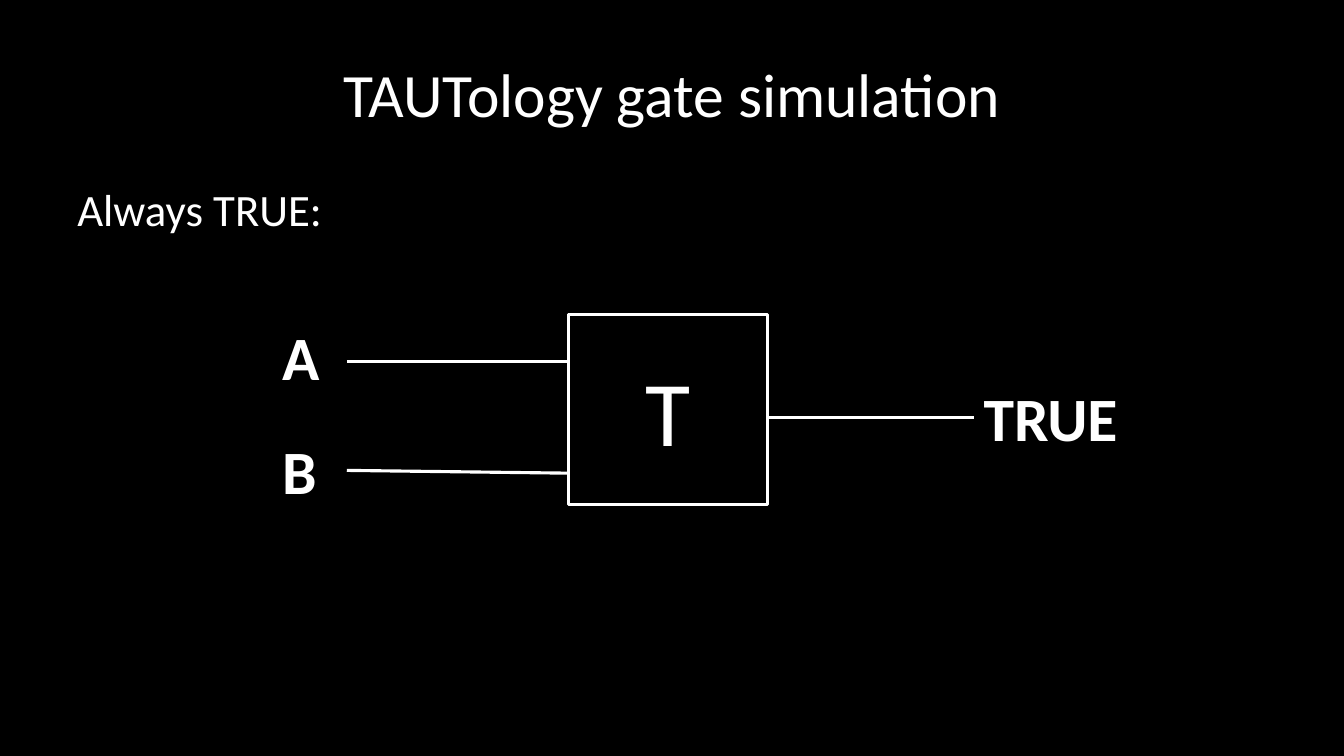
"""Build the TAUTology gate simulation slide."""
from pptx import Presentation
from pptx.dml.color import RGBColor
from pptx.enum.shapes import MSO_CONNECTOR, MSO_SHAPE
from pptx.enum.text import MSO_ANCHOR, MSO_AUTO_SIZE, PP_ALIGN
from pptx.oxml.ns import qn
from pptx.util import Pt
from lxml.etree import SubElement

COLORS = {"background": "000000", "foreground": "FFFFFF"}
FONT = "Calibri"
GATE_LEFT, GATE_TOP, GATE_WIDTH, GATE_HEIGHT = 406, 224.6, 142, 136
GATE_RIGHT = GATE_LEFT + GATE_WIDTH
INPUT_LEFT, OUTPUT_RIGHT = 247.7, 695.5


def color(name):
    return RGBColor.from_string(COLORS[name])


def set_text(sp, text, size, align=PP_ALIGN.LEFT, anchor=MSO_ANCHOR.TOP, bold=False):
    tf = sp.text_frame
    tf.text = text
    tf.vertical_anchor = anchor
    p = tf.paragraphs[0]
    p.alignment = align
    font = p.runs[0].font
    font.name, font.size, font.bold = FONT, Pt(size), bold
    font.color.rgb = color("foreground")
    return tf


def place(sp, left, top, width, height):
    sp.left, sp.top, sp.width, sp.height = map(Pt, (left, top, width, height))


def fill_title(s, text):
    sp = s.shapes.title
    place(sp, 48, 21.6, 864, 90)
    set_text(sp, text, 44, PP_ALIGN.CENTER, MSO_ANCHOR.MIDDLE)


def fill_body(s, text):
    sp = s.placeholders[1]
    place(sp, 48, 126, 864, 356.4)
    tf = set_text(sp, text, 32)
    tf.auto_size = MSO_AUTO_SIZE.NONE
    pPr = tf.paragraphs[0]._p.get_or_add_pPr()
    pPr.set("marL", "0")
    pPr.set("indent", "0")
    SubElement(pPr, qn("a:buNone"))


def add_gate(s, text):
    box = map(Pt, (GATE_LEFT, GATE_TOP, GATE_WIDTH, GATE_HEIGHT))
    sp = s.shapes.add_shape(MSO_SHAPE.RECTANGLE, *box)
    sp.shadow.inherit = False
    sp.fill.background()
    sp.line.color.rgb = color("foreground")
    sp.line.width = Pt(2)
    set_text(sp, text, 66, PP_ALIGN.CENTER, MSO_ANCHOR.MIDDLE)


def add_wire(s, x1, y1, x2, y2):
    wire = s.shapes.add_connector(MSO_CONNECTOR.STRAIGHT, *map(Pt, (x1, y1, x2, y2)))
    wire.line.color.rgb = color("foreground")
    wire.line.width = Pt(2.25)
    SubElement(wire._element.spPr, qn("a:effectLst"))


def add_label(s, text, left, top, width):
    sp = s.shapes.add_textbox(*map(Pt, (left, top, width, 60.5)))
    tf = set_text(sp, text, 44, bold=True)
    tf.word_wrap = False
    tf.auto_size = MSO_AUTO_SIZE.SHAPE_TO_FIT_TEXT


def main():
    prs = Presentation()
    prs.slide_width, prs.slide_height = Pt(960), Pt(540)
    s = prs.slides.add_slide(prs.slide_layouts[1])
    s.background.fill.solid()
    s.background.fill.fore_color.rgb = color("background")

    fill_title(s, "TAUTology gate simulation")
    fill_body(s, "Always TRUE:")
    add_wire(s, INPUT_LEFT, 258.5, GATE_LEFT, 258.5)
    add_wire(s, INPUT_LEFT, 336, GATE_LEFT, 338)
    add_gate(s, "T")
    add_wire(s, GATE_RIGHT, 298, OUTPUT_RIGHT, 298)
    add_label(s, "A", 194.4, 224.6, 41.8)
    add_label(s, "B", 194.4, 306, 39.6)
    add_label(s, "TRUE", OUTPUT_RIGHT, 267.8, 112.3)

    prs.save("out.pptx")


if __name__ == "__main__":
    main()
